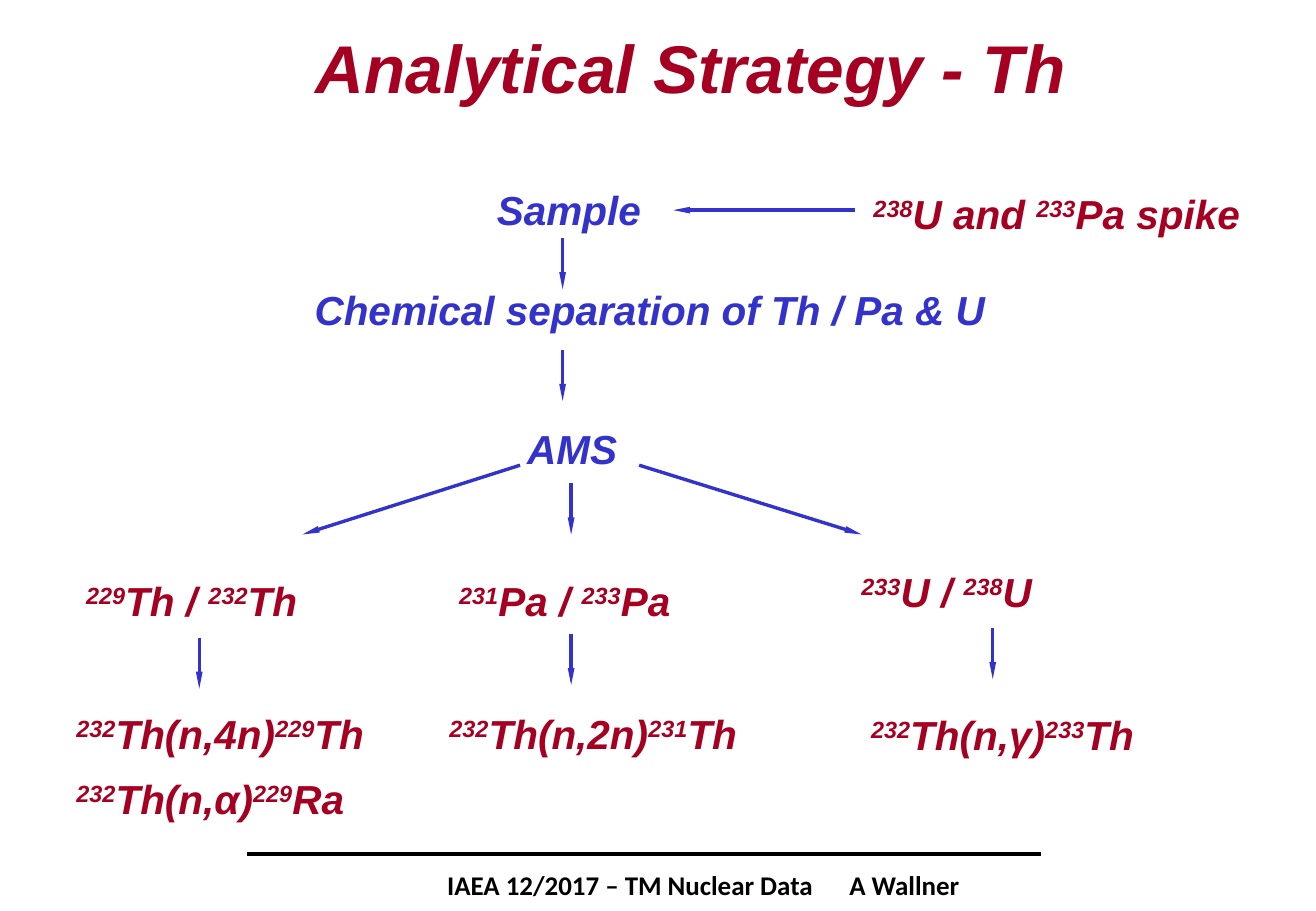
from pptx import Presentation
from pptx import util as u
from pptx.dml.color import RGBColor
from pptx.enum import shapes, text
from pptx.oxml import ns
from lxml import etree

PX = 9144
RED = RGBColor(0xA5, 0x00, 0x21)
BLUE = RGBColor(0x33, 0x33, 0xCC)
BLACK = RGBColor(0, 0, 0)
WHITE = RGBColor(0xFF, 0xFF, 0xFF)
DROP = 42

STEPS = [
    ("Sample", 399, 147, 139),
    ("Chemical separation of Th / Pa & U", 249, 230, 596),
    ("AMS", 424, 344, 94),
]
NUCLIDES = [
    ("^238^U and ^233^Pa spike", 709, 151, 334),
    ("^229^Th / ^232^Th", 61, 469, 205),
    ("^231^Pa / ^233^Pa", 368, 469, 205),
    ("^233^U / ^238^U", 699, 462, 172),
    ("^232^Th(n,4n)^229^Th", 53, 579, 268),
    ("^232^Th(n,2n)^231^Th", 360, 579, 268),
    ("^232^Th(n,γ)^233^Th", 707, 580, 243),
    ("^232^Th(n,α)^229^Ra", 53, 632, 252),
]
DROPS = [(463, 196), (463, 288), (470, 398), (164, 525), (470, 522), (817, 517)]
SLANTS = [(704, 173, 554, 173), (428, 383, 249, 440), (526, 383, 709, 440)]


def px(*vals):
    return [u.Emu(val * PX) for val in vals]


def style(font, name, size, color, slant=True):
    font.name = name
    font.size = u.Pt(size)
    font.color.rgb = color
    font.bold = True
    font.italic = slant


def add_title(slide, words):
    title = slide.shapes.title
    title.left, title.top, title.width, title.height = px(250, 13, 677, 83)
    title.fill.solid()
    title.fill.fore_color.rgb = WHITE
    frame = title.text_frame
    frame.text = words
    frame.auto_size = text.MSO_AUTO_SIZE.NONE
    frame.vertical_anchor = text.MSO_ANCHOR.MIDDLE
    para = frame.paragraphs[0]
    para.alignment = text.PP_ALIGN.LEFT
    style(para.runs[0].font, "Arial", 40, RED)


def add_label(slide, words, left, top, width, color):
    box = slide.shapes.add_textbox(*px(left, top, width, 51))
    frame = box.text_frame
    frame.word_wrap = False
    para = frame.paragraphs[0]
    for num, part in enumerate(words.split("^")):
        if part:
            run = para.add_run()
            run.text = part
            style(run.font, "Arial", 24, color)
            if num % 2:
                run._r.get_or_add_rPr().set("baseline", "30000")


def add_line(slide, ends, color, width, arrow=False):
    kind = shapes.MSO_CONNECTOR.STRAIGHT
    line = slide.shapes.add_connector(kind, *px(*ends))
    line.line.color.rgb = color
    line.line.width = u.Pt(width)
    if arrow:
        tail = etree.SubElement(line.line._get_or_add_ln(), ns.qn("a:tailEnd"))
        for key, val in (("type", "triangle"), ("w", "sm"), ("len", "lg")):
            tail.set(key, val)
    etree.SubElement(line._element.spPr, ns.qn("a:effectLst"))


def add_footer(slide, words):
    add_line(slide, (203, 703, 857, 703), BLACK, 2.25)
    box = slide.shapes.add_textbox(*px(195, 710, 772, 37))
    frame = box.text_frame
    frame.word_wrap = True
    frame.margin_left = px(173)[0]
    frame.text = words
    para = frame.paragraphs[0]
    tabs = etree.SubElement(para._p.get_or_add_pPr(), ns.qn("a:tabLst"))
    stop = etree.SubElement(tabs, ns.qn("a:tab"))
    stop.set("pos", str(331 * PX))
    stop.set("algn", "l")
    for run in para.runs:
        style(run.font, "Calibri", 16, BLACK, False)


def main():
    deck = Presentation()
    deck.slide_width, deck.slide_height = px(1083, 750)
    slide = deck.slides.add_slide(deck.slide_layouts[5])
    add_footer(slide, "IAEA 12/2017 – TM Nuclear Data\tA Wallner")
    add_title(slide, "Analytical Strategy - Th")
    for color, labels in ((BLUE, STEPS), (RED, NUCLIDES)):
        for label in labels:
            add_label(slide, *label, color)
    drops = [(left, top, left, top + DROP) for left, top in DROPS]
    for ends in drops + SLANTS:
        add_line(slide, ends, BLUE, 2, True)
    deck.save("out.pptx")


if __name__ == "__main__":
    main()
